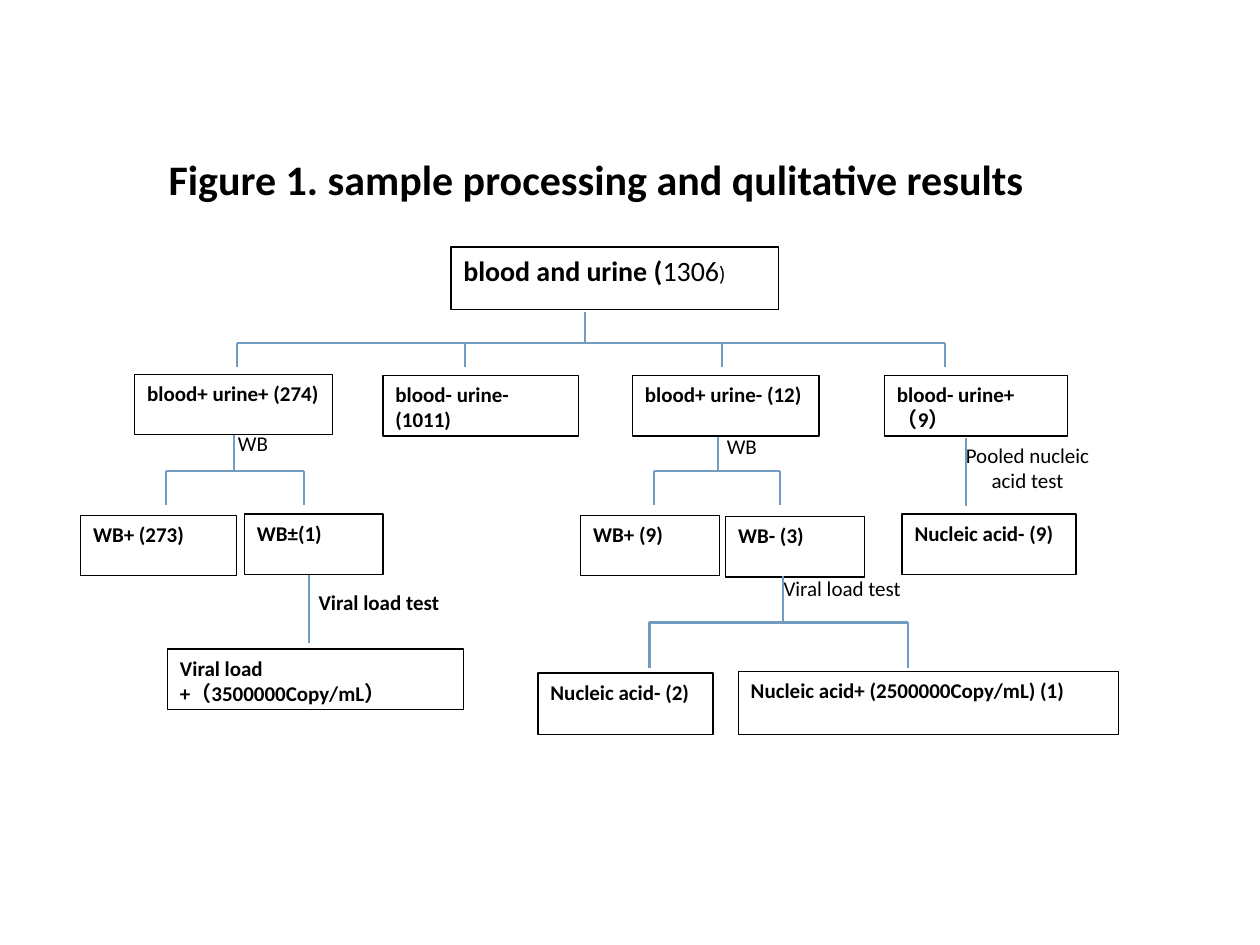
from lxml.etree import SubElement
from pptx import Presentation
from pptx.dml.color import RGBColor
from pptx.enum.shapes import MSO_CONNECTOR, MSO_SHAPE
from pptx.enum.text import MSO_ANCHOR, PP_ALIGN
from pptx.oxml.ns import qn
from pptx.util import Inches, Pt

COLORS = {"ink": "000000", "paper": "FFFFFF", "branch": "739CC3"}
COLUMNS, ROWS = 100, 75
BOTTOM = 2


def color(name):
    return RGBColor.from_string(COLORS[name])


def write(paragraph, text, size=12, bold=True, font="Calibri", ink="ink"):
    run = paragraph.add_run()
    run.text = text
    run.font.name = font
    run.font.size = Pt(size)
    run.font.bold = bold
    run.font.color.rgb = color(ink)


class FlowChart:
    box_line = Pt(0.75)
    branch_line = Pt(1.25)

    def __init__(self, deck):
        self.cell_width = deck.slide_width / COLUMNS
        self.cell_height = deck.slide_height / ROWS
        self.slide = deck.slides.add_slide(deck.slide_layouts[6])

    def x(self, column):
        return round(column * self.cell_width)

    def y(self, row):
        return round(row * self.cell_height)

    def area(self, column, row, width, height):
        return self.x(column), self.y(row), self.x(width), self.y(height)

    def frame(self, holder):
        frame = holder.text_frame
        frame.word_wrap = True
        frame.vertical_anchor = MSO_ANCHOR.TOP
        return frame

    def box(self, runs, column, row, width, height=4.8, outline="ink"):
        step = self.slide.shapes.add_shape(
            MSO_SHAPE.RECTANGLE, *self.area(column, row, width, height))
        step.shadow.inherit = False
        step.fill.solid()
        step.fill.fore_color.rgb = color("paper")
        step.line.color.rgb = color(outline)
        step.line.width = self.box_line
        paragraph = self.frame(step).paragraphs[0]
        paragraph.alignment = PP_ALIGN.LEFT
        for text, style in runs:
            write(paragraph, text, **style)
        return step

    def label(self, lines, column, row, width, height=4.9,
              align=PP_ALIGN.LEFT, bold=False):
        note = self.slide.shapes.add_textbox(*self.area(column, row, width, height))
        frame = self.frame(note)
        for index, text in enumerate(lines):
            paragraph = frame.add_paragraph() if index else frame.paragraphs[0]
            paragraph.alignment = align
            write(paragraph, text, bold=bold)

    def line(self, x1, y1, x2, y2, source=None):
        branch = self.slide.shapes.add_connector(
            MSO_CONNECTOR.STRAIGHT, self.x(x1), self.y(y1), self.x(x2), self.y(y2))
        branch.line.color.rgb = color("branch")
        branch.line.width = self.branch_line
        SubElement(branch._element.spPr, qn("a:effectLst"))
        if source is not None:
            branch.begin_connect(source, BOTTOM)

    def fork(self, stem, top, bar, drops, end, source=None):
        self.line(stem, top, stem, bar, source)
        self.line(drops[0], bar, drops[-1], bar)
        for drop in drops:
            self.line(drop, bar, drop, end)


def main():
    deck = Presentation()
    deck.slide_width, deck.slide_height = Inches(10), Inches(7.5)
    chart = FlowChart(deck)

    chart.box([("Figure 1. sample processing and qulitative results", {"size": 24})],
              12.4, 11.7, 70.9, 4.9, outline="paper")
    chart.box([("blood and urine (", {"size": 16}),
               ("1306", {"size": 16, "bold": False}),
               (")", {"bold": False})], 35.8, 19.6, 26, 5)

    steps = {}
    for text, *place in (
        ("blood+ urine+ (274)", 10.7, 29.7, 15.7),
        ("blood- urine- (1011)", 30.4, 29.8, 15.5),
        ("blood+ urine- (12)", 50.2, 29.8, 14.8),
        ("blood- urine+ （9）", 70.2, 29.8, 14.5),
        ("WB+ (273)", 6.4, 40.9, 12.4),
        ("WB±(1)", 19.4, 40.8, 11),
        ("WB+ (9)", 46.1, 40.9, 11),
        ("WB- (3)", 57.6, 41, 11),
        ("Nucleic acid- (9)", 71.6, 40.8, 13.8),
        ("Viral load +（3500000Copy/mL）", 13.3, 51.5, 23.5),
        ("Nucleic acid- (2)", 42.7, 53.4, 13.9, 4.9),
        ("Nucleic acid+ (2500000Copy/mL) (1)", 58.6, 53.3, 30.2, 5),
    ):
        steps[text] = chart.box([(text, {})], *place)

    chart.label(["WB"], 17.9, 33.7, 5.5)
    chart.label(["WB"], 56.7, 33.9, 5.5)
    chart.label(["Pooled nucleic", "acid test"], 74.3, 34.6, 14.5, 6.4,
                align=PP_ALIGN.CENTER)
    chart.label(["Viral load test"], 61.2, 45.2, 12.9)
    chart.label(["Viral load test"], 24.3, 46.3, 12.9, bold=True)

    chart.fork(46.4, 24.8, 27.25, (18.8, 36.9, 57.3, 75), 29.1)
    chart.fork(18.55, 34.5, 37.4, (13.2, 24.1), 40.1,
               steps["blood+ urine+ (274)"])
    chart.fork(57, 34.7, 37.4, (51.9, 61.9), 40.1)
    chart.fork(62.15, 45.7, 49.4, (51.55, 72.05), 53)
    chart.line(76.7, 34.8, 76.7, 40.2)
    chart.line(24.5, 45.6, 24.5, 51)

    deck.save("out.pptx")


if __name__ == "__main__":
    main()
